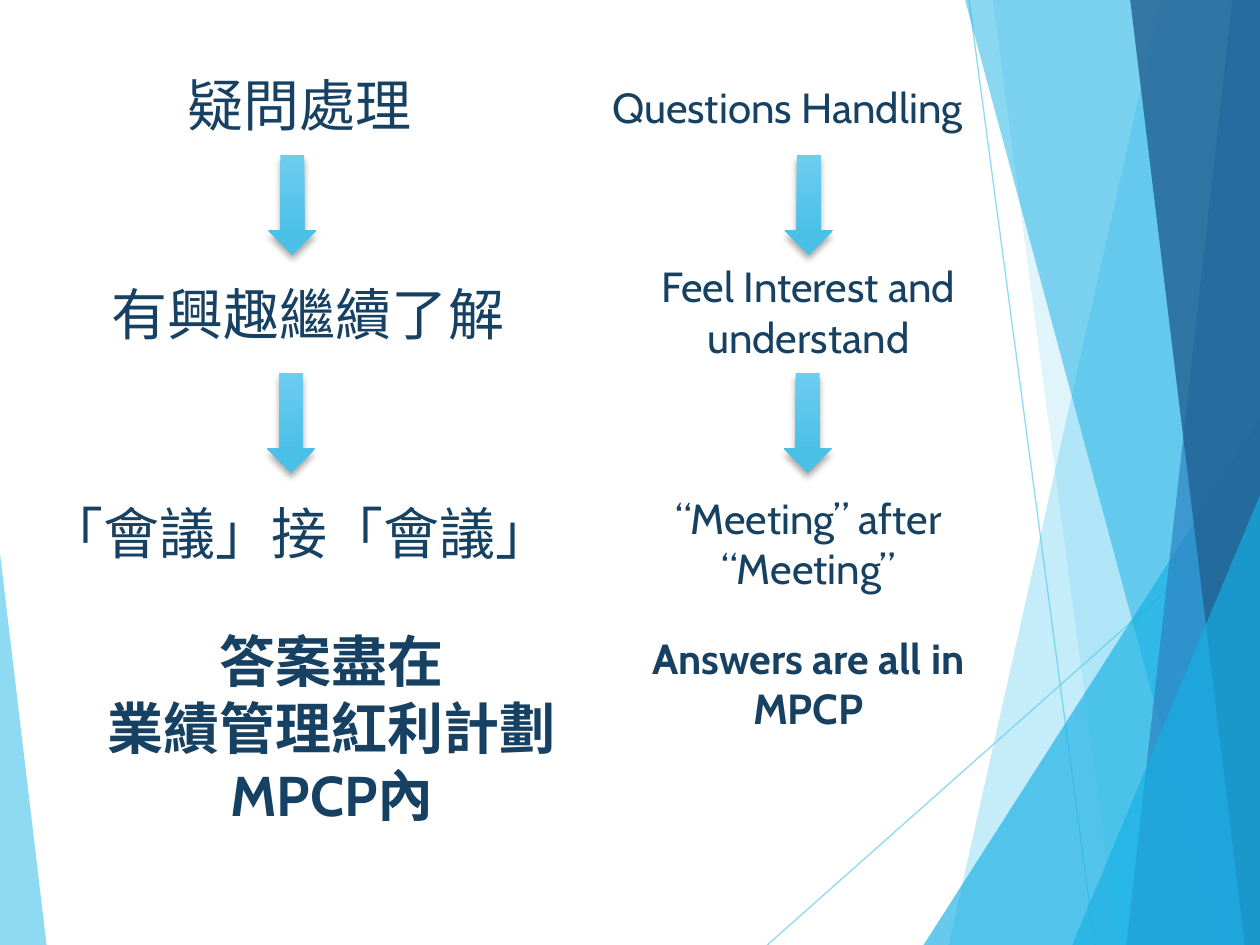
from dataclasses import dataclass

from lxml.etree import SubElement
from pptx import Presentation
from pptx.dml.color import RGBColor
from pptx.enum.shapes import MSO_CONNECTOR, MSO_SHAPE
from pptx.enum.text import MSO_AUTO_SIZE, PP_ALIGN
from pptx.oxml.ns import qn
from pptx.util import Inches, Pt


@dataclass(frozen=True)
class Theme:
    """Colours, font and type sizes of the deck."""
    ink: str = "174162"
    sky: str = "5FCBEF"
    cyan: str = "17B0E4"
    blue: str = "2E83C3"
    navy: str = "226292"
    arrow_top: str = "6CCDF0"
    arrow_bottom: str = "4BC0E6"
    shadow: str = "000000"
    font: str = "Cabin"
    large: int = 32
    medium: int = 24
    hairline: float = 0.75


def set_alpha(shape, percent):
    """Make every plain colour of a shape translucent."""
    for colour in shape.element.spPr.iter(qn("a:srgbClr")):
        SubElement(colour, qn("a:alpha"), val=str(percent * 1000))


def write_text(frame, text, *, font, size, colour, bold=False, align=PP_ALIGN.LEFT):
    """Fill a text frame with one formatted paragraph per line of text."""
    for index, line in enumerate(text.split("\n")):
        para = frame.paragraphs[0] if index == 0 else frame.add_paragraph()
        para.alignment = align
        span = para.add_run()
        span.text = line
        span.font.name = font
        span.font.size = Pt(size)
        span.font.bold = bold
        span.font.color.rgb = RGBColor.from_string(colour)


class SlideBuilder:
    """Draws on one page, measured on a grid of 100 columns by 75 rows."""

    columns, rows = 100, 75

    def __init__(self, deck, theme):
        self.theme = theme
        self.page = deck.slides.add_slide(deck.slide_layouts[6])
        self.column = deck.slide_width / self.columns
        self.row = deck.slide_height / self.rows

    def grid(self, *lengths):
        """Turn alternating columns and rows into slide lengths."""
        units = (self.column, self.row)
        return [round(length * units[i % 2]) for i, length in enumerate(lengths)]

    def paint(self, shape, colour, alpha):
        """Give a shape a flat translucent fill without outline or shadow."""
        shape.shadow.inherit = False
        shape.line.fill.background()
        shape.fill.solid()
        shape.fill.fore_color.rgb = RGBColor.from_string(colour)
        set_alpha(shape, alpha)

    def ray(self, start, end):
        """Draw a thin translucent line between two grid points."""
        line = self.page.shapes.add_connector(
            MSO_CONNECTOR.STRAIGHT, *self.grid(*start, *end))
        line.line.color.rgb = RGBColor.from_string(self.theme.sky)
        line.line.width = Pt(self.theme.hairline)
        set_alpha(line, 70)
        SubElement(line.element.spPr, qn("a:effectLst"))

    def band(self, top, bottom, colour, alpha):
        """Draw a slanted band that reaches the right edge of the page."""
        points = [(top, 0), (self.columns, 0),
                  (self.columns, self.rows), (bottom, self.rows)]
        corners = [self.grid(*point) for point in points]
        builder = self.page.shapes.build_freeform(*corners[0], scale=1.0)
        builder.add_line_segments(corners[1:], close=True)
        self.paint(builder.convert_to_shape(), colour, alpha)

    def triangle(self, left, top, width, apex, colour, alpha):
        """Draw a triangle that stands on the bottom edge of the page."""
        shape = self.page.shapes.add_shape(
            MSO_SHAPE.ISOSCELES_TRIANGLE,
            *self.grid(left, top, width, self.rows - top))
        shape.adjustments[0] = apex
        self.paint(shape, colour, alpha)

    def arrow(self, left, top):
        """Draw a shaded arrow pointing down to the next step."""
        shape = self.page.shapes.add_shape(
            MSO_SHAPE.DOWN_ARROW, *self.grid(left, top, 3.8, 7.9))
        shape.line.fill.background()
        shape.fill.gradient()
        shape.fill.gradient_angle = 270
        stops = ((0, self.theme.arrow_top), (0.78, self.theme.arrow_bottom))
        for stop, (position, colour) in zip(shape.fill.gradient_stops, stops):
            stop.position = position
            stop.color.rgb = RGBColor.from_string(colour)
        shape.shadow.inherit = False
        effects = shape.element.spPr.find(qn("a:effectLst"))
        outer = SubElement(effects, qn("a:outerShdw"), blurRad=str(Pt(4)),
                           dist=str(Pt(3)), dir="5400000", rotWithShape="0")
        colour = SubElement(outer, qn("a:srgbClr"), val=self.theme.shadow)
        SubElement(colour, qn("a:alpha"), val="35000")

    def text(self, place, text, size, **style):
        """Place a wrapped text box."""
        box = self.page.shapes.add_textbox(*self.grid(*place))
        box.text_frame.word_wrap = True
        box.text_frame.auto_size = MSO_AUTO_SIZE.SHAPE_TO_FIT_TEXT
        write_text(box.text_frame, text, font=self.theme.font, size=size,
                   colour=self.theme.ink, **style)


def draw_backdrop(slide, theme):
    """Draw the translucent facets along the page edges."""
    slide.ray((76.9, 0), (86.9, 75))
    slide.ray((100, 40.3), (60.9, 75))
    slide.band(92.1, 75.3, theme.sky, 36)
    slide.band(78.8, 88.7, theme.sky, 20)
    slide.triangle(73.3, 33.3, 26.7, 1, theme.cyan, 66)
    slide.band(76.6, 96.8, theme.cyan, 50)
    slide.band(97.8, 89.4, theme.blue, 70)
    slide.band(89.7, 98.8, theme.navy, 80)
    slide.triangle(85.1, 39.3, 14.9, 1, theme.cyan, 66)
    slide.triangle(0, 43.9, 3.7, 0, theme.sky, 70)


def draw_steps(slide, theme):
    """Draw the Chinese and English flows side by side."""
    centre = {"align": PP_ALIGN.CENTER}
    strong = {"bold": True, **centre}
    large, medium = theme.large, theme.medium
    steps = [
        ((13.9, 5.1, 23.5, 6.4), "疑問處理", large, {}),
        ((7.9, 21.7, 39, 6.4), "有興趣繼續了解", large, {}),
        ((2.8, 39.1, 42.5, 6.4), "「會議」接「會議」", large, {}),
        ((5.1, 49.2, 42.5, 17.2), "答案盡在\n業績管理紅利計劃MPCP內", large, strong),
        ((47.6, 6, 34.3, 5), "Questions Handling", medium, {}),
        ((47.6, 20.2, 33.1, 9.1), "Feel Interest and understand", medium, centre),
        ((49.2, 38.6, 29.9, 9.1), "“Meeting” after “Meeting”", medium, centre),
        ((49.2, 49.7, 29.9, 9.1), "Answers are all in MPCP", medium, strong),
    ]
    for place, text, size, style in steps:
        slide.text(place, text, size, **style)
    for left in (21.3, 62.3):
        slide.arrow(left, 12.3)
        slide.arrow(left - 0.1, 29.6)


def main():
    """Build and save the deck."""
    deck = Presentation()
    deck.slide_width, deck.slide_height = Inches(10), Inches(7.5)
    theme = Theme()
    slide = SlideBuilder(deck, theme)
    draw_backdrop(slide, theme)
    draw_steps(slide, theme)
    deck.save("out.pptx")


if __name__ == "__main__":
    main()
